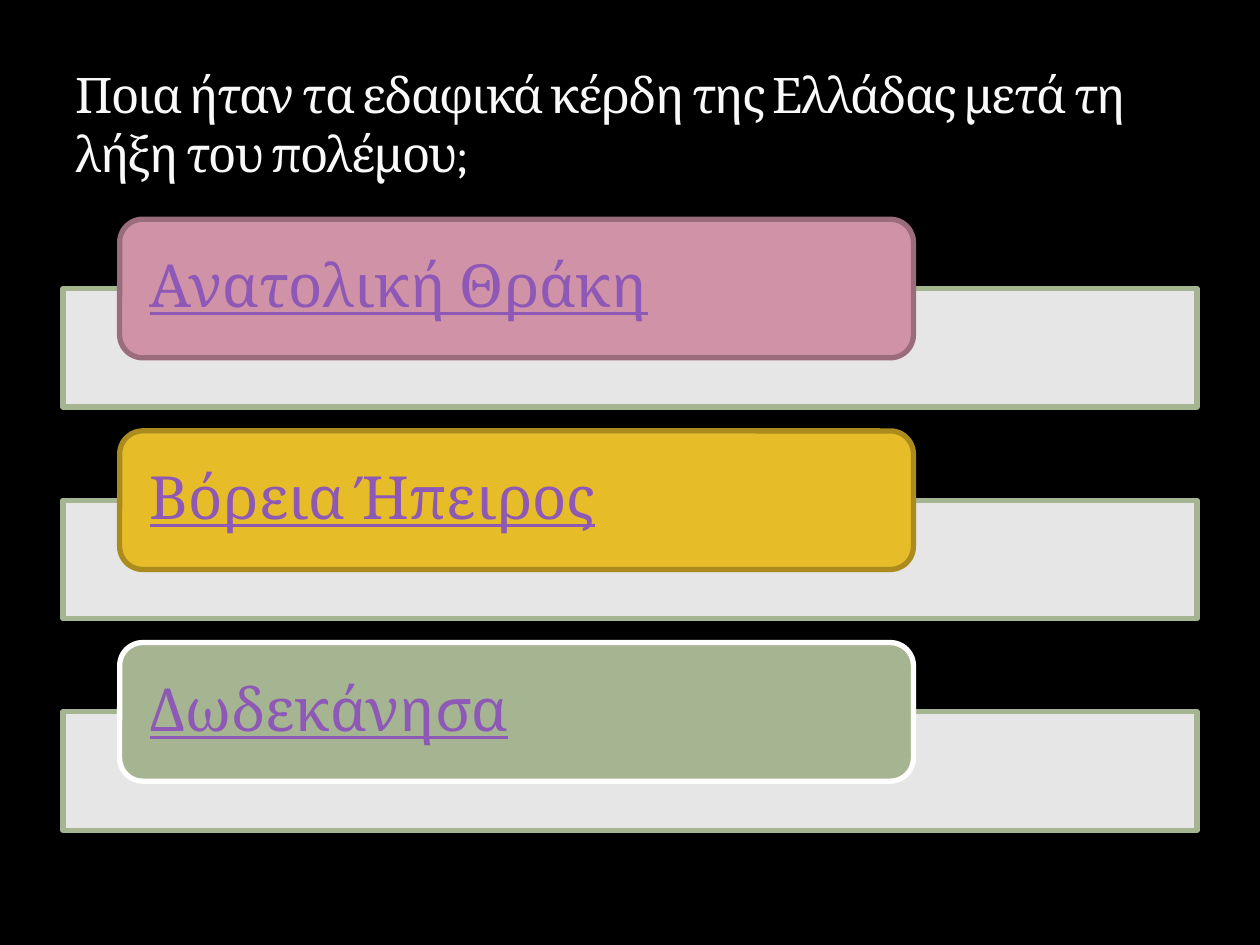
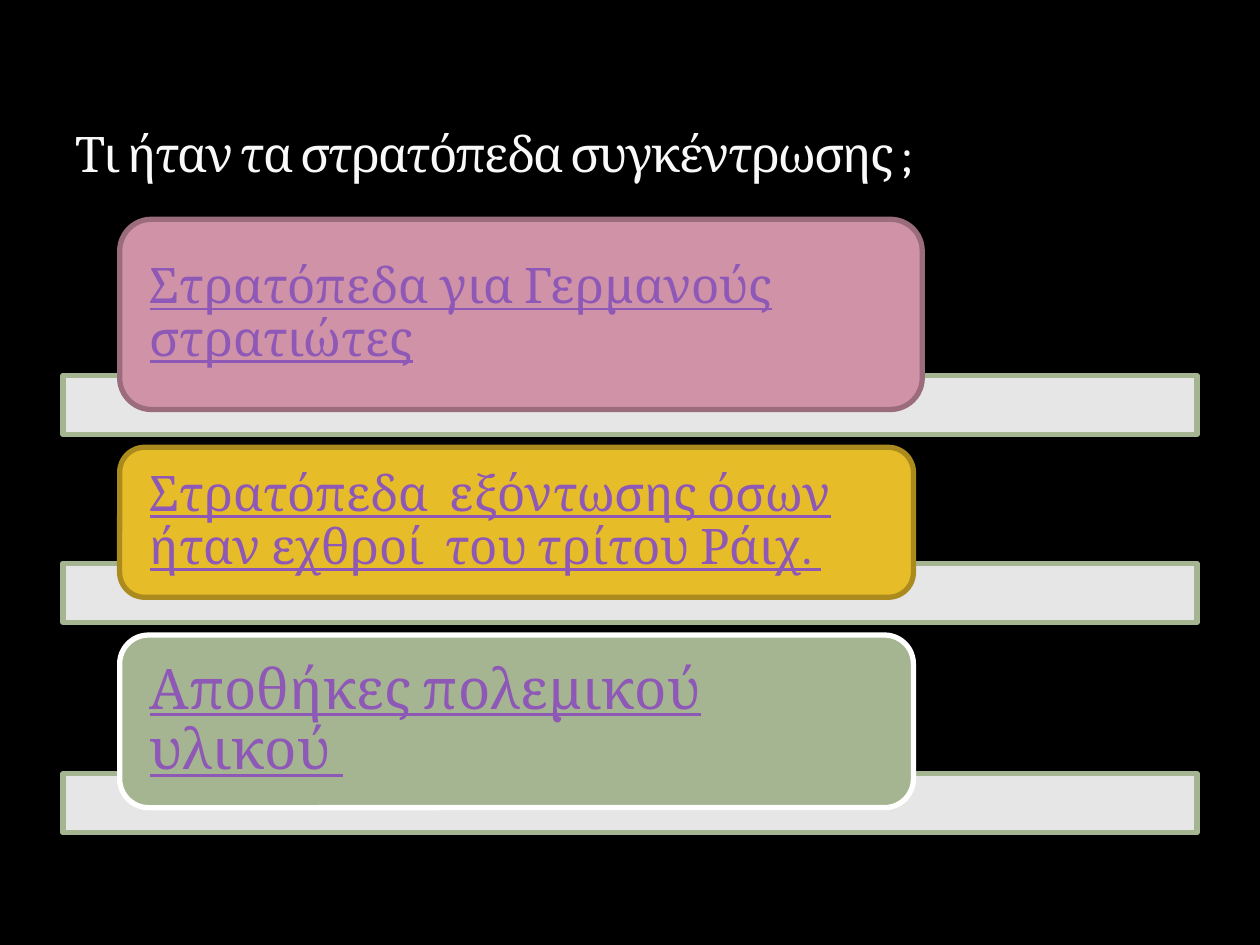
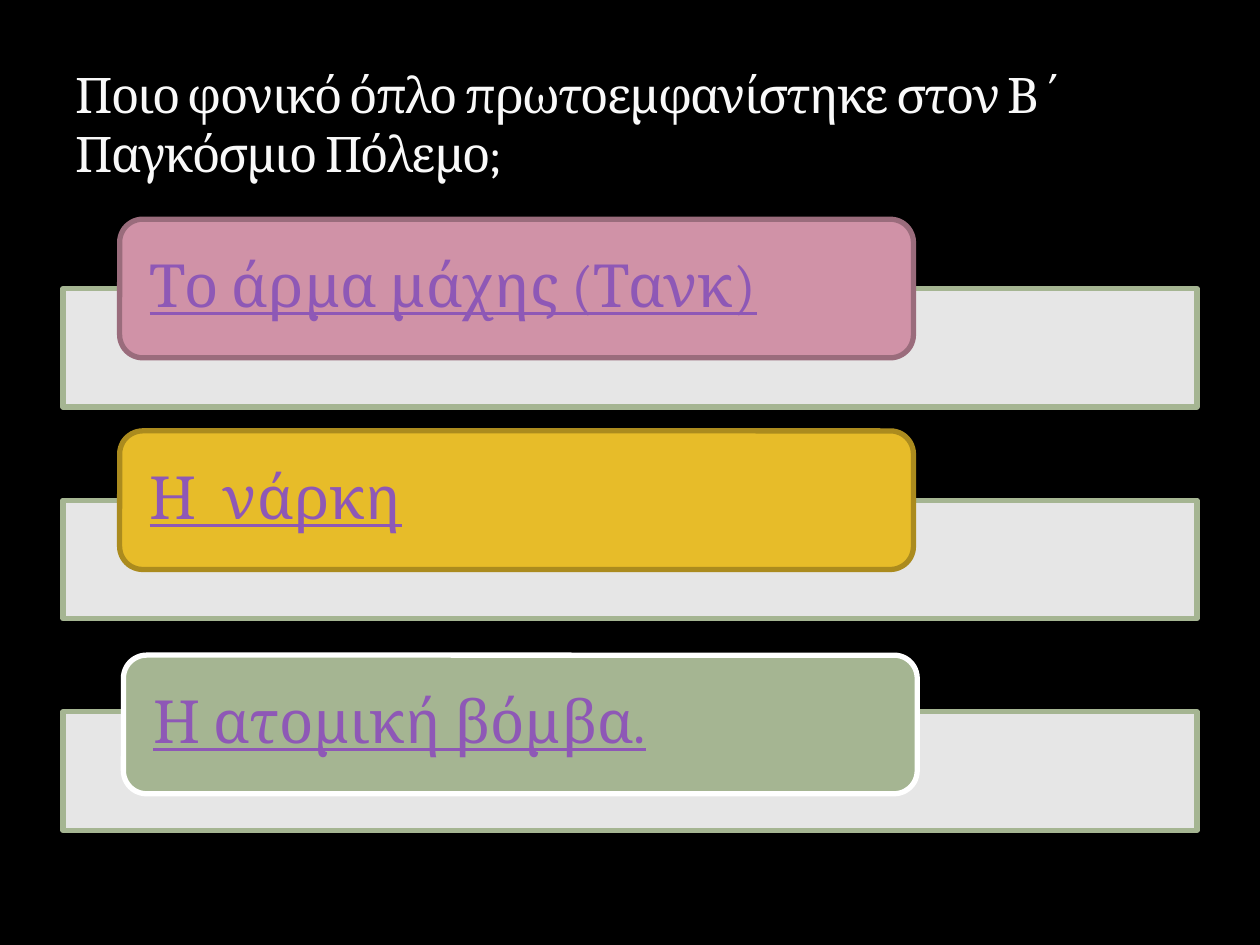
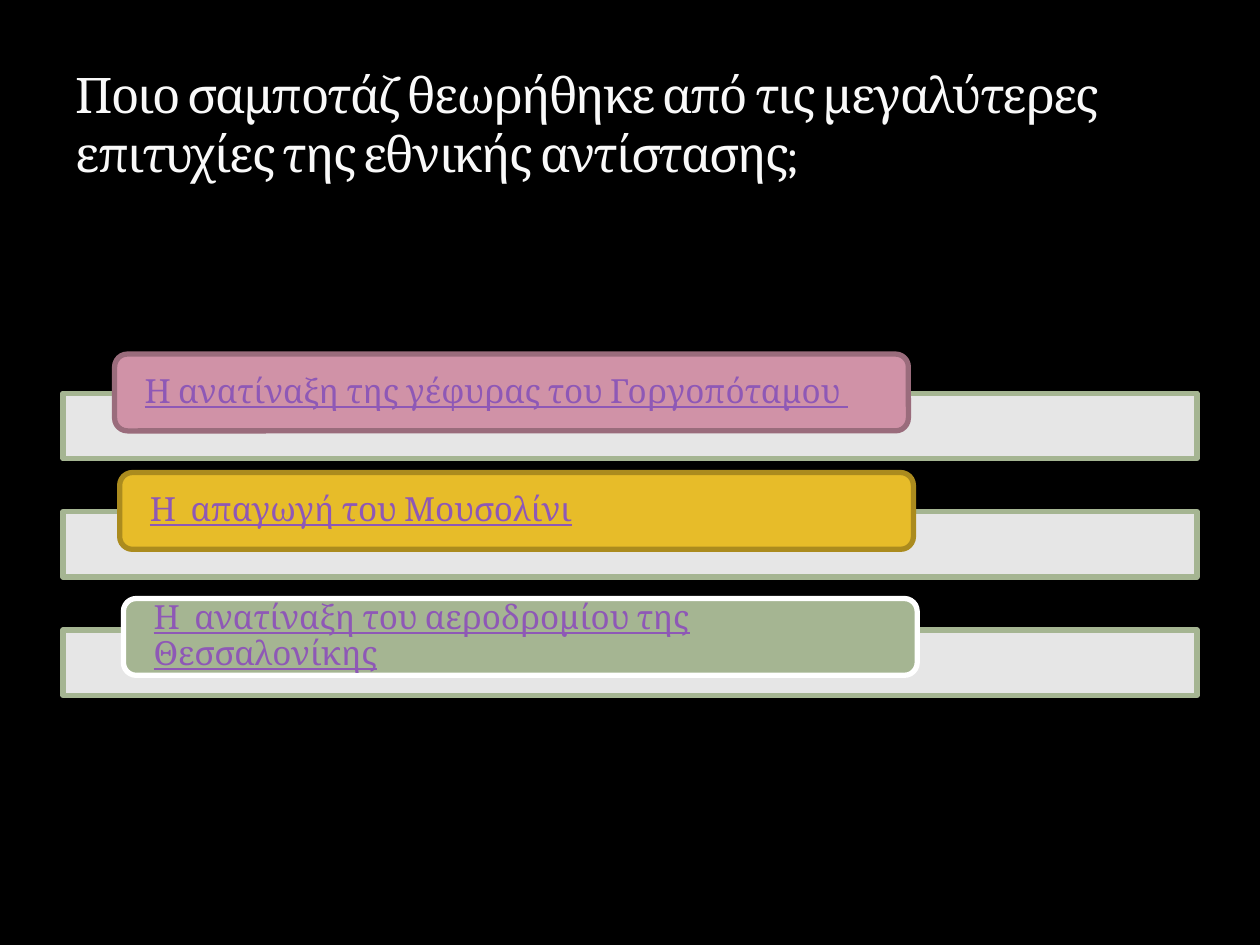
import pptx
import pptx.dml.color
import pptx.enum.shapes
import pptx.enum.text
import pptx.util
from lxml import etree
from pptx.oxml.ns import qn

Inches = pptx.util.Inches
Pt = pptx.util.Pt
RGBColor = pptx.dml.color.RGBColor
SHAPES = pptx.enum.shapes.MSO_SHAPE
ANCHOR = pptx.enum.text.MSO_ANCHOR
ALIGN = pptx.enum.text.PP_ALIGN

BLACK = RGBColor(0x00, 0x00, 0x00)
WHITE = RGBColor(0xFF, 0xFF, 0xFF)
TITLE_WHITE = RGBColor(0xF9, 0xF9, 0xF9)
TITLE_OUTLINE = RGBColor(0x3C, 0x44, 0x22)
LINK_PURPLE = RGBColor(0x8E, 0x58, 0xB6)
PINK = RGBColor(0xD0, 0x92, 0xA7)
DARK_PINK = RGBColor(0x9A, 0x6C, 0x7C)
GOLD = RGBColor(0xE7, 0xBC, 0x29)
DARK_GOLD = RGBColor(0xAB, 0x8B, 0x1E)
SAGE = RGBColor(0xA5, 0xB5, 0x92)

ANSWER_COLORS = [(PINK, DARK_PINK), (GOLD, DARK_GOLD), (SAGE, WHITE)]
TITLE_FONT = {"name": "Cambria", "size": Pt(28)}
ANSWER_FONT = {"name": "Cambria", "underline": True}

LEFT_MARGIN, CONTENT_WIDTH = 0.5, 9
ANSWER_LEFT, ANSWER_WIDTH = 0.95, 6.3
TEXT_INDENT = 0.24
CORNER_INSET = 0.05  # share of its height by which a rounded box insets its text

# top: first answer; gap: between answers; overlap: how far an answer covers its bar
TALL_BARS = {"top": 1.74, "gap": 0.58, "overlap": 0.55, "bar_height": 0.94}
THIN_BARS = {"top": 1.74, "gap": 0.3, "overlap": 0.27, "bar_height": 0.47}
SMALL_BARS = {"top": 2.81, "gap": 0.33, "overlap": 0.3, "bar_height": 0.52}

# Each answer: text, font size, box height, then optional changes to its place
QUESTIONS = [
    ("Ποια ήταν τα εδαφικά κέρδη της Ελλάδας μετά τη λήξη του πολέμου;", TALL_BARS, [
        ("Ανατολική Θράκη", 34, 1.1, {}),
        ("Βόρεια Ήπειρος", 34, 1.1, {}),
        ("Δωδεκάνησα", 34, 1.1, {}),
    ]),
    ("Τι ήταν τα στρατόπεδα συγκέντρωσης ;", THIN_BARS, [
        ("Στρατόπεδα για Γερμανούς στρατιώτες", 28, 1.51, {"widen": 0.07}),
        ("Στρατόπεδα  εξόντωσης όσων ήταν εχθροί  του τρίτου Ράιχ. ", 28, 1.19, {}),
        ("Αποθήκες πολεμικού υλικού ", 32, 1.37, {}),
    ]),
    ("Ποιο φονικό όπλο πρωτοεμφανίστηκε στον Β΄ Παγκόσμιο Πόλεμο;", TALL_BARS, [
        ("Το άρμα μάχης (Τανκ)", 34, 1.1, {}),
        ("Η  νάρκη", 34, 1.1, {}),
        ("Η ατομική βόμβα.", 34, 1.1, {"right": 0.03, "down": 0.1}),
    ]),
    ("Ποιο σαμποτάζ θεωρήθηκε από τις μεγαλύτερες επιτυχίες της εθνικής αντίστασης;", SMALL_BARS, [
        ("Η ανατίναξη της γέφυρας του Γοργοπόταμου ", 19, 0.61, {"right": -0.04}),
        ("Η  απαγωγή του Μουσολίνι", 19, 0.61, {}),
        ("Η  ανατίναξη του αεροδρομίου της Θεσσαλονίκης", 19, 0.61, {"right": 0.03, "down": 0.06}),
    ]),
]


def set_values(target, values):
    for name, value in values.items():
        setattr(target, name, value)


def set_alpha(color_element, percent):
    etree.SubElement(color_element, qn("a:alpha"), val=str(percent * 1000))


def format_run(run, font_values, color):
    set_values(run.font, font_values)
    run.font.color.rgb = color


def prepare_layout(presentation):
    """Give all slides the black background and the title its place."""
    background = presentation.slide_master.background.fill
    background.solid()
    background.fore_color.rgb = BLACK
    layout = presentation.slide_layouts.get_by_name("Title Only")
    set_values(layout.placeholders[0], {
        "left": Inches(LEFT_MARGIN), "top": Inches(0.29),
        "width": Inches(CONTENT_WIDTH), "height": Inches(1.21)})
    return layout


def add_title(slide, text):
    frame = slide.shapes.title.text_frame
    set_values(frame, {"text": text, "word_wrap": True, "vertical_anchor": ANCHOR.BOTTOM,
                       "auto_size": pptx.enum.text.MSO_AUTO_SIZE.NONE})
    paragraph = frame.paragraphs[0]
    paragraph.alignment = ALIGN.LEFT
    run = paragraph.runs[0]
    format_run(run, TITLE_FONT, TITLE_WHITE)
    properties = run._r.get_or_add_rPr()
    properties.set("spc", "-100")
    outline = etree.Element(qn("a:ln"), w=str(Pt(0.25)))
    fill = etree.SubElement(outline, qn("a:solidFill"))
    set_alpha(etree.SubElement(fill, qn("a:srgbClr"), val=str(TITLE_OUTLINE)), 25)
    properties.insert(0, outline)


def add_box(slide, kind, left, top, width, height, fill, line):
    box = slide.shapes.add_shape(kind, Inches(left), Inches(top), Inches(width), Inches(height))
    box.shadow.inherit = False
    box.fill.solid()
    box.fill.fore_color.rgb = fill
    box.line.color.rgb = line
    box.line.width = Pt(3)
    return box


def add_bar(slide, top, height):
    bar = add_box(slide, SHAPES.RECTANGLE, LEFT_MARGIN, top, CONTENT_WIDTH, height, WHITE, SAGE)
    set_alpha(bar._element.spPr.find(qn("a:solidFill"))[0], 90)


def add_answer(slide, text, size, top, height, colors, right=0, down=0, widen=0):
    box = add_box(slide, SHAPES.ROUNDED_RECTANGLE, ANSWER_LEFT + right, top + down,
                  ANSWER_WIDTH + widen, height, *colors)
    side_margin = Inches(TEXT_INDENT - CORNER_INSET * height)
    frame = box.text_frame
    set_values(frame, {"text": text, "word_wrap": True, "vertical_anchor": ANCHOR.MIDDLE,
                       "margin_left": side_margin, "margin_right": side_margin,
                       "margin_top": 0, "margin_bottom": 0})
    paragraph = frame.paragraphs[0]
    set_values(paragraph, {"alignment": ALIGN.LEFT, "line_spacing": 0.9})
    format_run(paragraph.runs[0], {**ANSWER_FONT, "size": Pt(size)}, LINK_PURPLE)


def add_question(presentation, layout, title, grid, answers):
    slide = presentation.slides.add_slide(layout)
    add_title(slide, title)
    top = grid["top"]
    for (text, size, height, changes), colors in zip(answers, ANSWER_COLORS):
        add_bar(slide, top + height - grid["overlap"], grid["bar_height"])
        add_answer(slide, text, size, top, height, colors, **changes)
        top += height + grid["gap"]


def main():
    presentation = pptx.Presentation()
    presentation.slide_width = Inches(10)
    presentation.slide_height = Inches(7.5)
    layout = prepare_layout(presentation)
    for title, grid, answers in QUESTIONS:
        add_question(presentation, layout, title, grid, answers)
    presentation.save("out.pptx")


if __name__ == "__main__":
    main()
